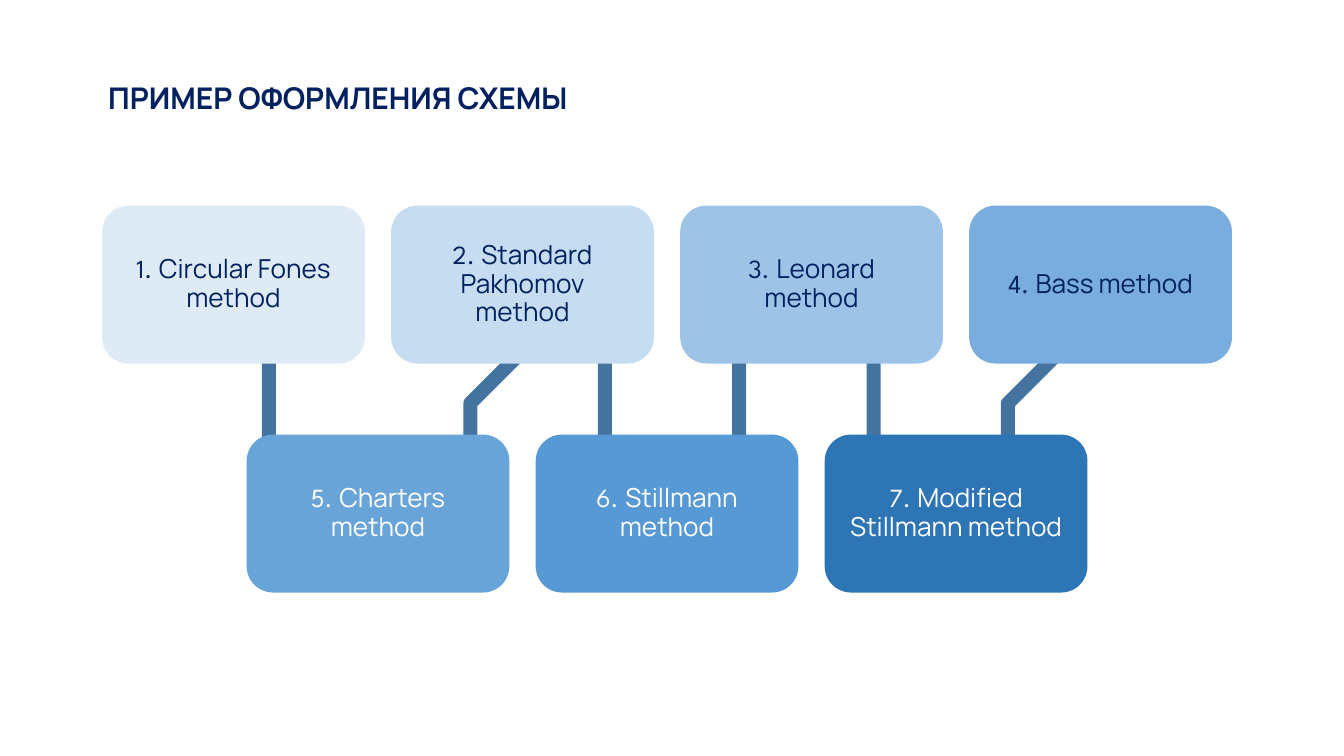
from dataclasses import dataclass

from pptx import Presentation
from pptx.dml.color import RGBColor
from pptx.enum.shapes import MSO_SHAPE
from pptx.enum.text import MSO_ANCHOR, PP_ALIGN
from pptx.util import Inches, Pt

INK = {"navy": "002060", "white": "FFFFFF", "path": "43739E"}
WIDE, HIGH = 3.91, 2.35
LEFT, TOP = 1.52, 3.06
COL, ROW = WIDE * 1.1, HIGH * 1.45
PAD = Inches(0.23)
STEPS = 20


@dataclass
class Card:
    col: float
    row: int
    fill: str
    ink: str
    text: str


CARDS = [
    Card(0, 0, "DEEBF7", "navy", "Circular Fones method"),
    Card(1, 0, "C5DCF1", "navy", "Standard Pakhomov method"),
    Card(2, 0, "9DC3E6", "navy", "Leonard method"),
    Card(3, 0, "79ADDD", "navy", "Bass method"),
    Card(0.5, 1, "69A4D9", "white", "Charters method"),
    Card(1.5, 1, "5799D5", "white", "Stillmann method"),
    Card(2.5, 1, "2E75B6", "white", "Modified Stillmann method"),
]

START = (4.09, 4.93)
# Each curve: two control points, then its end
CURVES = [
    ((4.33, 6.24), (4.57, 7.55), (5.3, 7.54)),
    ((6.03, 7.54), (7.68, 4.92), (8.48, 4.92)),
    ((9.28, 4.91), (9.48, 7.56), (10.09, 7.53)),
    ((10.71, 7.49), (11.49, 4.68), (12.17, 4.69)),
    ((12.85, 4.71), (13.5, 7.63), (14.16, 7.63)),
    ((14.83, 7.62), (15.74, 4.42), (16.15, 4.68)),
]


def add_run(para, text: str, size: int, face: str, ink: str, bold: bool = False):
    run = para.add_run()
    run.text = text
    run.font.size = Pt(size)
    run.font.name = face
    run.font.bold = bold
    run.font.color.rgb = RGBColor.from_string(INK[ink])


def bend(a, b, c, d, t: float):
    """Point at share t of a cubic curve."""
    u = 1 - t
    return tuple(
        u**3 * p + 3 * u * u * t * q + 3 * u * t * t * r + t**3 * s
        for p, q, r, s in zip(a, b, c, d)
    )


def add_wave(slide):
    points, begin = [], START
    for one, two, end in CURVES:
        points += [bend(begin, one, two, end, i / STEPS) for i in range(1, STEPS + 1)]
        begin = end
    pen = slide.shapes.build_freeform(*START, scale=Inches(1))
    pen.add_line_segments(points, close=False)
    wave = pen.convert_to_shape()
    wave.shadow.inherit = False
    wave.fill.background()
    wave.line.color.rgb = RGBColor.from_string(INK["path"])
    wave.line.width = Pt(15)


def add_card(slide, num: int, card: Card):
    box = slide.shapes.add_shape(
        MSO_SHAPE.ROUNDED_RECTANGLE,
        Inches(LEFT + card.col * COL), Inches(TOP + card.row * ROW),
        Inches(WIDE), Inches(HIGH),
    )
    box.shadow.inherit = False
    box.fill.solid()
    box.fill.fore_color.rgb = RGBColor.from_string(card.fill)
    box.line.fill.background()
    frame = box.text_frame
    frame.word_wrap = True
    frame.vertical_anchor = MSO_ANCHOR.MIDDLE
    frame.margin_left = frame.margin_right = PAD
    frame.margin_top = frame.margin_bottom = PAD
    para = frame.paragraphs[0]
    para.alignment = PP_ALIGN.CENTER
    para.line_spacing = 0.9
    add_run(para, f"{num}. ", 28, "League Spartan", card.ink)
    add_run(para, card.text, 28, "Manrope", card.ink)


def add_title(slide, text: str):
    title = slide.shapes.title
    title.left, title.top = Inches(1.51), Inches(0.9)
    title.width, title.height = Inches(13.69), Inches(1.1)
    title.text_frame.vertical_anchor = MSO_ANCHOR.MIDDLE
    para = title.text_frame.paragraphs[0]
    para.alignment = PP_ALIGN.LEFT
    add_run(para, text, 32, "Manrope", "navy", bold=True)


def main():
    deck = Presentation()
    deck.slide_width, deck.slide_height = Inches(20), Inches(11.25)
    slide = deck.slides.add_slide(deck.slide_layouts[5])
    add_title(slide, "ПРИМЕР ОФОРМЛЕНИЯ СХЕМЫ")
    add_wave(slide)
    for num, card in enumerate(CARDS, 1):
        add_card(slide, num, card)
    deck.save("out.pptx")


if __name__ == "__main__":
    main()
